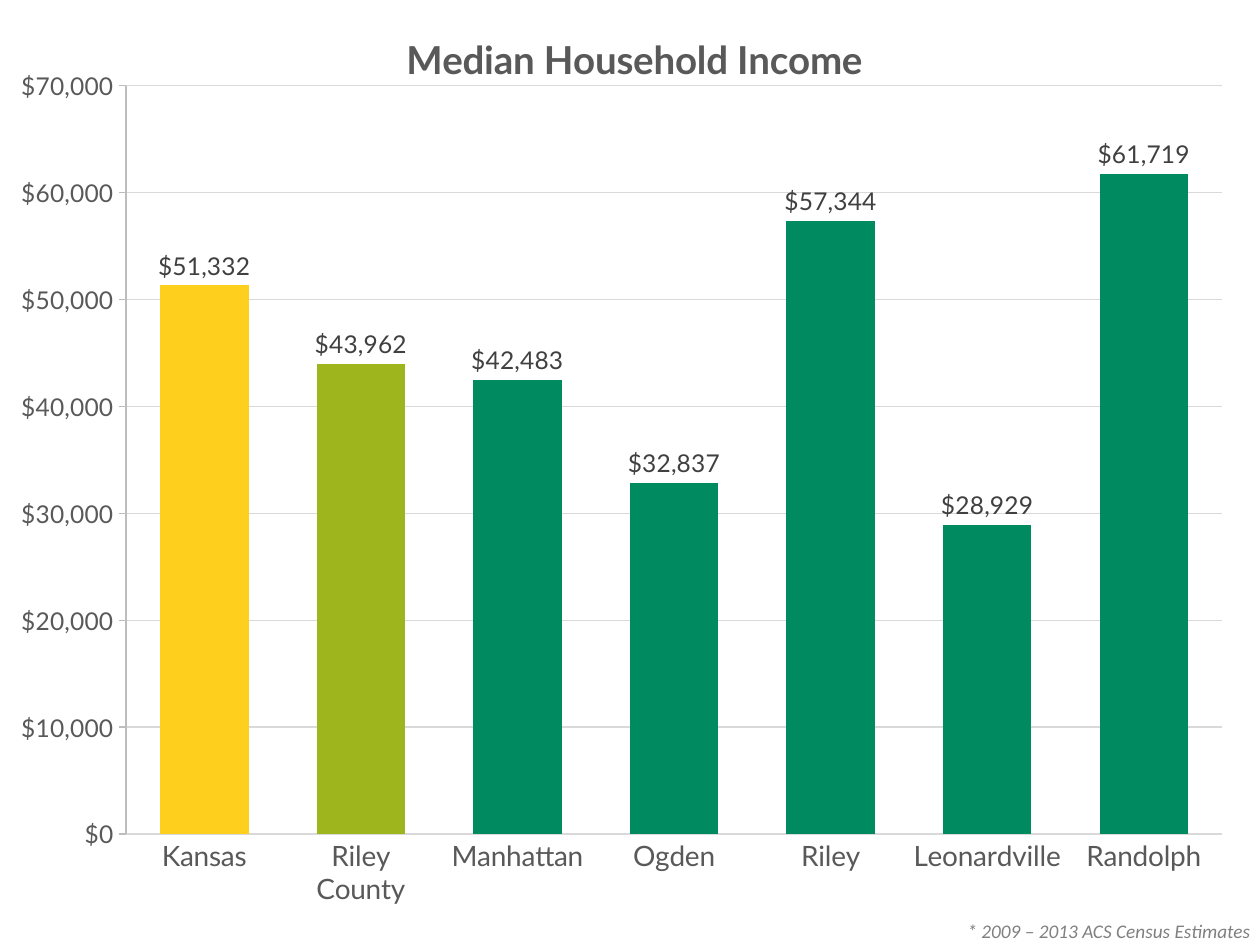
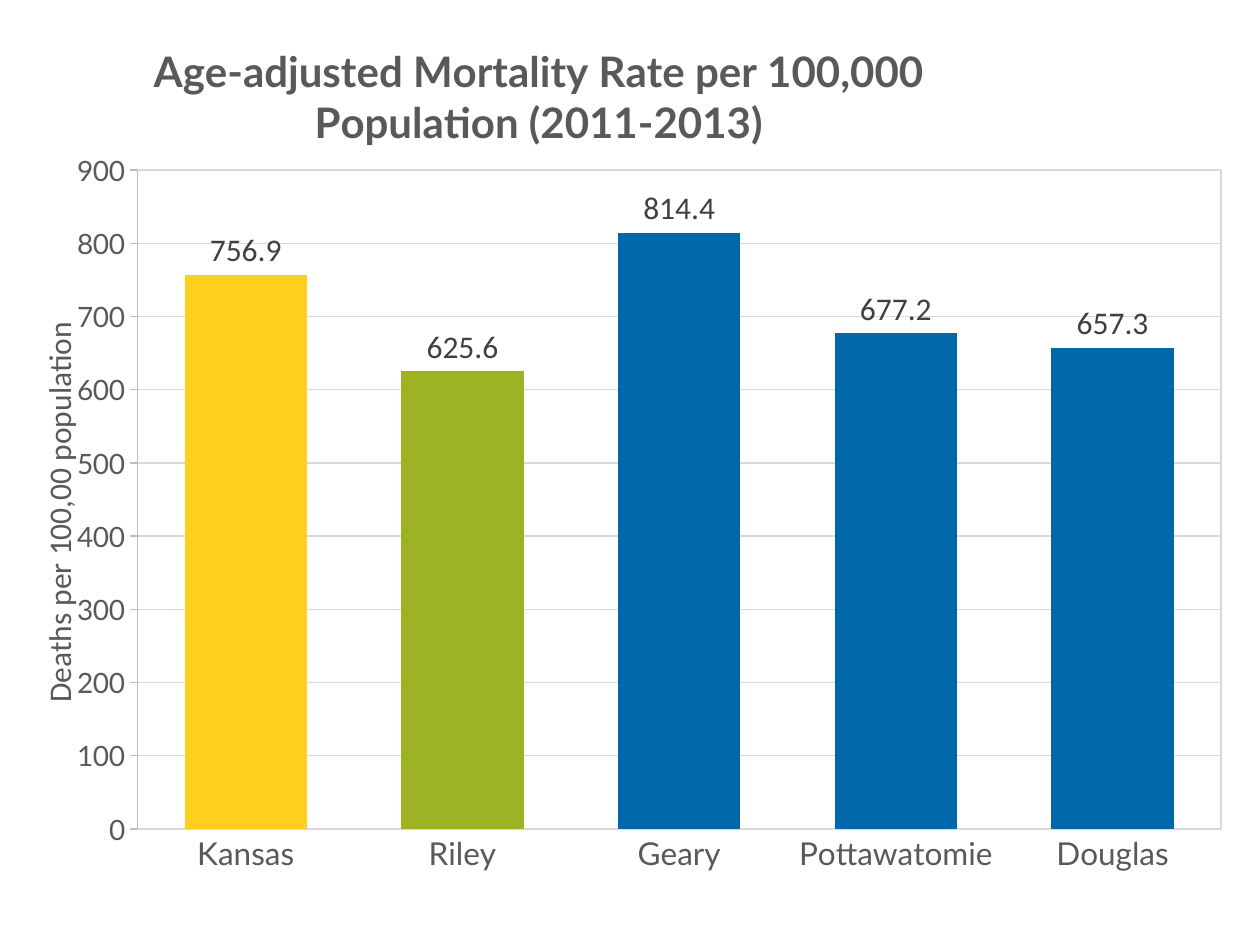
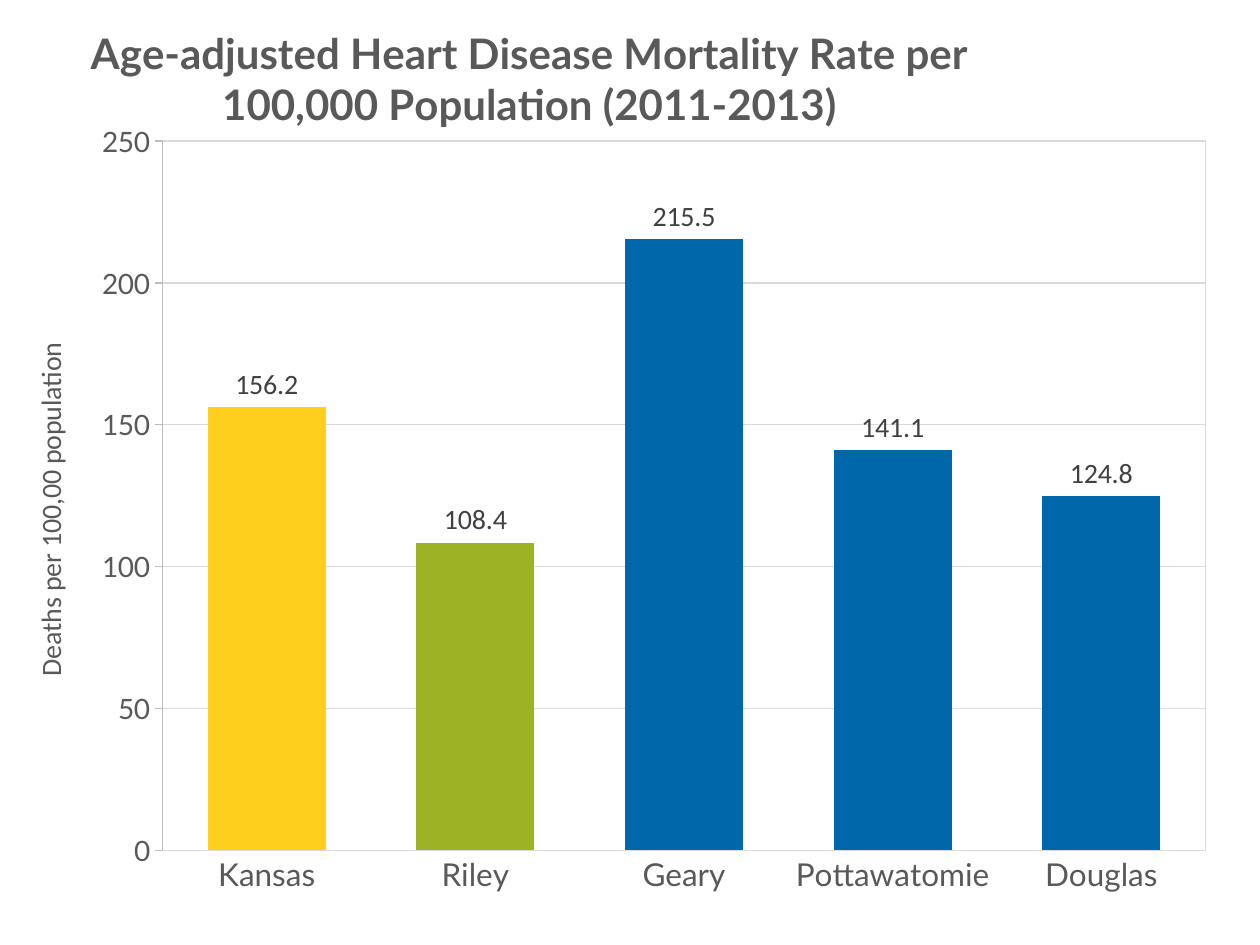
from lxml import etree
from pptx import Presentation
from pptx.chart import data as chart_data
from pptx.dml.color import RGBColor
from pptx.enum import chart as chart_enum, text
from pptx.oxml import ns
from pptx.util import Inches, Pt

COLORS = {
    "state": "FFCF1D",
    "riley_county": "9FB51D",
    "riley": "9EB323",
    "town": "008A5F",
    "county": "0067AA",
    "series": "066243",
    "text": "595959",
    "label": "404040",
    "note": "808080",
    "grid": "D9D9D9",
    "axis": "BDBDBD",
}
HEADING_FONT, BODY_FONT = "Lato", "Calibri"
BLANK_LAYOUT = 6
COUNTIES = ["Kansas", "Riley", "Geary", "Pottawatomie", "Douglas"]
COUNTY_COLORS = ["state", "riley"] + ["county"] * 3
DEATHS_AXIS = "Deaths per 100,00 population"


def rgb(name):
    return RGBColor.from_string(COLORS[name])


def style_font(font, size, color, name=HEADING_FONT, bold=False, italic=False):
    font.size, font.name = Pt(size), name
    font.bold, font.italic = bold, italic
    font.color.rgb = rgb(color)


def style_line(line, color):
    line.color.rgb = rgb(color)
    line.width = Pt(0.75)


def place(element, chart_box, position):
    """Lay out a title (x, y) or plot area (x, y, w, h), in inches."""
    for old in element.findall(ns.qn("c:layout")):
        element.remove(old)
    layout = etree.Element(ns.qn("c:layout"))
    manual = etree.SubElement(layout, ns.qn("c:manualLayout"))
    if len(position) == 4:
        etree.SubElement(manual, ns.qn("c:layoutTarget"), val="inner")
    for side in ("x", "y"):
        etree.SubElement(manual, ns.qn(f"c:{side}Mode"), val="edge")
    width, height = chart_box[2:]
    for key, length, whole in zip("xywh", position, (width, height) * 2):
        etree.SubElement(manual, ns.qn(f"c:{key}"), val=f"{length / whole:.4f}")
    has_text = element.find(ns.qn("c:tx")) is not None
    element.insert(1 if has_text else 0, layout)


def write_title(title, wording, chart_box, position, size, name=HEADING_FONT,
                bold=False):
    frame = title.text_frame
    run = frame.paragraphs[0].add_run()
    run.text = wording
    style_font(run.font, size, "text", name, bold)
    place(title.element, chart_box, position)
    return frame


def outline_plot(plot_area):
    properties = etree.SubElement(plot_area, ns.qn("c:spPr"))
    line = etree.SubElement(properties, ns.qn("a:ln"), w=str(Pt(0.75)))
    fill = etree.SubElement(line, ns.qn("a:solidFill"))
    etree.SubElement(fill, ns.qn("a:srgbClr"), val=COLORS["grid"])


def add_column_chart(slide, box, categories, values, colors, plot_box,
                     number_format):
    data = chart_data.CategoryChartData()
    data.categories = categories
    data.add_series("Series 1", values)
    chart = slide.shapes.add_chart(
        chart_enum.XL_CHART_TYPE.COLUMN_CLUSTERED,
        *(Inches(length) for length in box), data).chart
    chart.has_legend = False
    chart.font.size, chart.font.name = Pt(10), BODY_FONT
    place(chart.element.chart.plotArea, box, plot_box)

    # Columns
    plot = chart.plots[0]
    plot.gap_width = 77
    plot.vary_by_categories = False
    series = plot.series[0]
    series.format.fill.solid()
    series.format.fill.fore_color.rgb = rgb("series")
    for index, color in enumerate(colors):
        fill = series.points[index].format.fill
        fill.solid()
        fill.fore_color.rgb = rgb(color)

    # Value labels
    plot.has_data_labels = True
    labels = plot.data_labels
    labels.show_value = True
    labels.number_format, labels.number_format_is_linked = number_format, False
    labels.position = chart_enum.XL_LABEL_POSITION.OUTSIDE_END
    return chart


def style_axes(chart, category_size, value_size, maximum, step, number_format):
    category, value = chart.category_axis, chart.value_axis
    category.major_tick_mark = chart_enum.XL_TICK_MARK.NONE
    value.major_tick_mark = chart_enum.XL_TICK_MARK.OUTSIDE
    style_font(category.tick_labels.font, category_size, "text")
    style_font(value.tick_labels.font, value_size, "text")
    style_line(category.format.line, "grid")
    style_line(value.format.line, "axis")
    style_line(value.major_gridlines.format.line, "grid")
    value.minimum_scale, value.maximum_scale = 0, maximum
    value.major_unit = step
    value.tick_labels.number_format = number_format
    value.tick_labels.number_format_is_linked = False


def add_note(slide, wording):
    box = slide.shapes.add_textbox(
        Inches(7.58), Inches(7.25), Inches(2.42), Inches(0.25))
    frame = box.text_frame
    frame.word_wrap = False
    frame.vertical_anchor = text.MSO_ANCHOR.TOP
    frame.margin_right = frame.margin_bottom = 0
    run = frame.paragraphs[0].add_run()
    run.text = wording
    style_font(run.font, 11, "note", BODY_FONT, italic=True)


def add_income_slide(presentation):
    slide = presentation.slides.add_slide(
        presentation.slide_layouts[BLANK_LAYOUT])
    add_note(slide, "* 2009 – 2013 ACS Census Estimates")
    dollars = '"$"#,##0'
    box = (0, 0, 10.08, 7.5)
    chart = add_column_chart(
        slide, box,
        ["Kansas", "Riley County", "Manhattan", "Ogden", "Riley",
         "Leonardville", "Randolph"],
        [51332, 43962, 42483, 32837, 57344, 28929, 61719],
        ["state", "riley_county"] + ["town"] * 5,
        (1, 0.68, 8.7, 5.94), dollars)
    write_title(chart.chart_title, "Median Household Income", box,
                (3.17, 0.2), 22, bold=True)
    style_font(chart.plots[0].data_labels.font, 14, "label")
    style_axes(chart, 16, 14, 70000, 10000, dollars)


def add_mortality_slide(presentation, title, title_at, box, plot_box, values,
                        maximum, step, axis_title_at, label_size):
    slide = presentation.slides.add_slide(
        presentation.slide_layouts[BLANK_LAYOUT])
    chart = add_column_chart(slide, box, COUNTIES, values, COUNTY_COLORS,
                             plot_box, "0.0")
    write_title(chart.chart_title, title, box, title_at, 24, bold=True)
    style_font(chart.plots[0].data_labels.font, label_size, "label", BODY_FONT)
    style_axes(chart, 18, 16, maximum, step, "#,##0")
    frame = write_title(chart.value_axis.axis_title, DEATHS_AXIS, box,
                        axis_title_at, label_size, BODY_FONT)
    body = frame._txBody.find(ns.qn("a:bodyPr"))
    body.set("rot", "-5400000")
    body.set("vert", "horz")
    outline_plot(chart.element.chart.plotArea)


def main():
    presentation = Presentation()
    presentation.slide_width = Inches(10)
    presentation.slide_height = Inches(7.5)
    add_income_slide(presentation)
    add_mortality_slide(
        presentation,
        "Age-adjusted Mortality Rate per 100,000 Population (2011-2013)",
        title_at=(0.91, 0.18), box=(0.25, 0.08, 9.75, 7.33),
        plot_box=(0.84, 1.27, 8.6, 5.23),
        values=[756.9, 625.6, 814.4, 677.2, 657.3],
        maximum=900, step=100, axis_title_at=(0, 2.43), label_size=18)
    add_mortality_slide(
        presentation,
        "Age-adjusted Heart Disease Mortality Rate per 100,000 "
        "Population (2011-2013)",
        title_at=(0.66, 0.04), box=(0, 0.08, 9.92, 7.42),
        plot_box=(1.29, 1.04, 8.28, 5.63),
        values=[156.2, 108.4, 215.5, 141.1, 124.8],
        maximum=250, step=50, axis_title_at=(0.21, 2.6), label_size=16)
    presentation.save("out.pptx")


if __name__ == "__main__":
    main()
